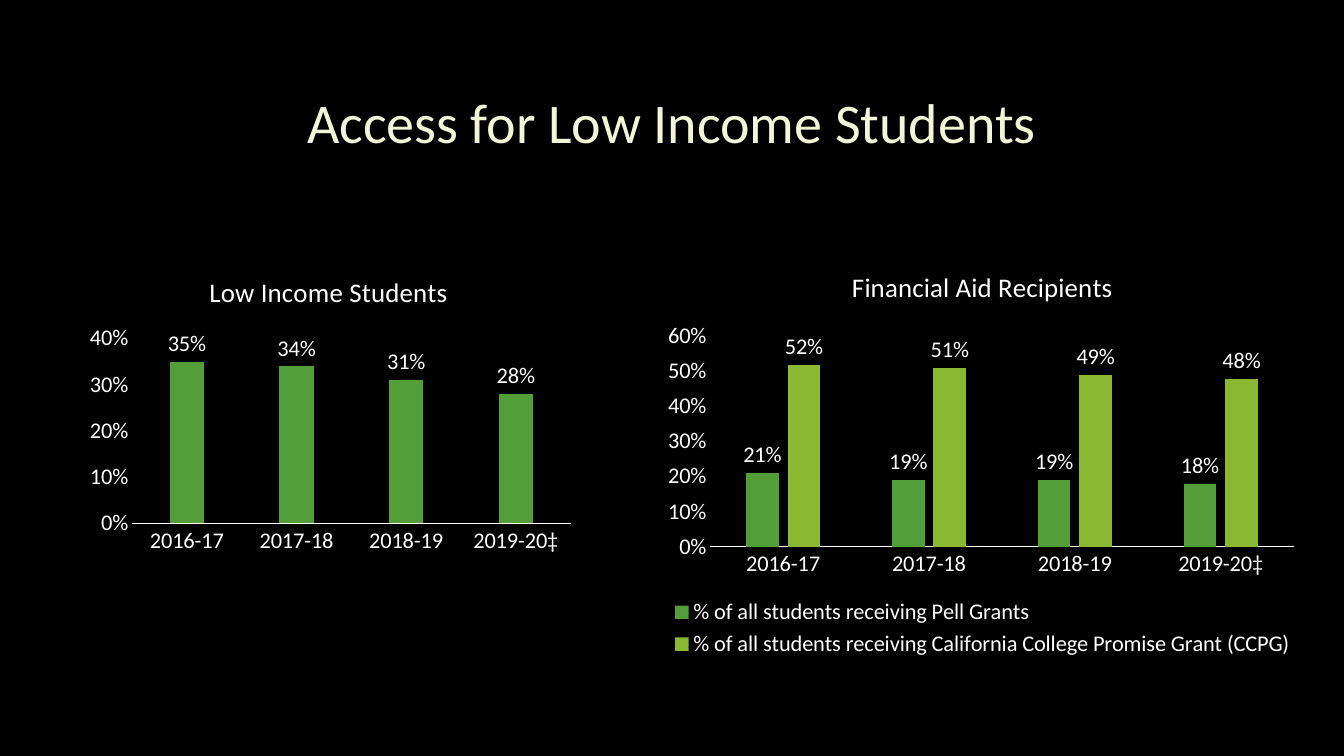
from lxml import etree
from pptx import Presentation
from pptx.chart.data import CategoryChartData
from pptx.dml.color import RGBColor
from pptx.enum.chart import (XL_CHART_TYPE, XL_LABEL_POSITION,
                             XL_LEGEND_POSITION, XL_TICK_MARK)
from pptx.enum.text import MSO_ANCHOR, PP_ALIGN
from pptx.oxml import parse_xml
from pptx.oxml.ns import nsdecls, qn
from pptx.util import Inches, Pt

COLUMNS = XL_CHART_TYPE.COLUMN_CLUSTERED
OUTSIDE_END = XL_LABEL_POSITION.OUTSIDE_END
BOTTOM = XL_LEGEND_POSITION.BOTTOM
NO_TICK = XL_TICK_MARK.NONE

BLACK = RGBColor(0x00, 0x00, 0x00)
WHITE = RGBColor(0xFF, 0xFF, 0xFF)
CREAM = RGBColor(0xF2, 0xF5, 0xD7)
GREEN = RGBColor(0x54, 0x9E, 0x39)
LIME = RGBColor(0x8A, 0xB8, 0x33)
FONT = "Calibri"
PERCENT = "0%"

TITLE = "Access for Low Income Students"
TITLE_BOX = (1, 0.67, 11.32, 1.06)
YEARS = ["2016-17", "2017-18", "2018-19", "2019-20‡"]
# The plot is left, top, width, height as shares of the chart.
CHARTS = [
    {"title": "Low Income Students",
     "box": (0.76, 2.55, 5, 3), "plot": (0.11, 0.27, 0.87, 0.61),
     "top": 0.4, "legend": False,
     "series": [("Low Income Students", GREEN, (0.35, 0.34, 0.31, 0.28))]},
    {"title": "Financial Aid Recipients",
     "box": (6.53, 2.48, 6.43, 4.09), "plot": (0.08, 0.21, 0.9, 0.51),
     "top": 0.6, "legend": True,
     "series": [
         ("% of all students receiving Pell Grants", GREEN,
          (0.21, 0.19, 0.19, 0.18)),
         ("% of all students receiving California College Promise Grant (CCPG)",
          LIME, (0.52, 0.51, 0.49, 0.48))]},
]


def set_font(font, size, color=WHITE):
    for name, value in {"name": FONT, "size": Pt(size), "bold": False}.items():
        setattr(font, name, value)
    font.color.rgb = color


def add_title(page):
    box = page.shapes.add_textbox(*map(Inches, TITLE_BOX))
    frame = box.text_frame
    frame.word_wrap = True
    frame.vertical_anchor = MSO_ANCHOR.MIDDLE
    para = frame.paragraphs[0]
    para.alignment = PP_ALIGN.CENTER
    span = para.add_run()
    span.text = TITLE
    set_font(span.font, 40, CREAM)
    outline = parse_xml(
        f'<a:ln {nsdecls("a")} w="{Pt(0.75)}"><a:solidFill>'
        '<a:srgbClr val="404040"><a:alpha val="10000"/></a:srgbClr>'
        '</a:solidFill></a:ln>')
    span.font._element.insert(0, outline)


def place_plot(chart, shares):
    """Fix the inner plot rectangle within the chart."""
    area = chart._chartSpace.find(".//" + qn("c:plotArea"))
    for old in area.findall(qn("c:layout")):
        area.remove(old)
    layout = etree.Element(qn("c:layout"))
    manual = etree.SubElement(layout, qn("c:manualLayout"))
    settings = [("layoutTarget", "inner"), ("xMode", "edge"), ("yMode", "edge")]
    settings += zip("xywh", shares)
    for tag, value in settings:
        etree.SubElement(manual, qn("c:" + tag)).set("val", str(value))
    area.insert(0, layout)


def style_axes(chart, top):
    years, shares = chart.category_axis, chart.value_axis
    for axis in (years, shares):
        axis.major_tick_mark = axis.minor_tick_mark = NO_TICK
        axis.has_major_gridlines = False
        set_font(axis.tick_labels.font, 16)
    years.format.line.color.rgb = WHITE
    years.format.line.width = Pt(0.75)
    shares.format.line.fill.background()
    scale = {"minimum_scale": 0, "maximum_scale": top, "major_unit": 0.1}
    for name, value in scale.items():
        setattr(shares, name, value)
    shares.tick_labels.number_format = PERCENT
    shares.tick_labels.number_format_is_linked = False


def style_series(series, color):
    series.format.fill.solid()
    series.format.fill.fore_color.rgb = color
    labels = series.data_labels
    settings = {"show_value": True, "position": OUTSIDE_END,
                "number_format": PERCENT, "number_format_is_linked": False}
    for name, value in settings.items():
        setattr(labels, name, value)
    set_font(labels.font, 16)


def add_column_chart(page, content):
    data = CategoryChartData(number_format=PERCENT)
    data.categories = YEARS
    for name, _, values in content["series"]:
        data.add_series(name, values)
    chart = page.shapes.add_chart(
        COLUMNS, *map(Inches, content["box"]), data).chart
    set_font(chart.font, 16)

    chart.has_title = True
    chart.chart_title.include_in_layout = False
    para = chart.chart_title.text_frame.paragraphs[0]
    span = para.add_run()
    span.text = content["title"]
    set_font(span.font, 19.2)

    chart.has_legend = content["legend"]
    if chart.has_legend:
        chart.legend.position = BOTTOM
        chart.legend.include_in_layout = False
        set_font(chart.legend.font, 16)

    columns = chart.plots[0]
    columns.gap_width = 219
    columns.overlap = -27
    columns.vary_by_categories = False
    for series, (_, color, _) in zip(columns.series, content["series"]):
        style_series(series, color)
    style_axes(chart, content["top"])
    place_plot(chart, content["plot"])


def main():
    deck = Presentation()
    deck.slide_width, deck.slide_height = Inches(13.33), Inches(7.5)
    page = deck.slides.add_slide(deck.slide_layouts[6])
    page.background.fill.solid()
    page.background.fill.fore_color.rgb = BLACK
    add_title(page)
    for content in CHARTS:
        add_column_chart(page, content)
    deck.save("out.pptx")


if __name__ == "__main__":
    main()
